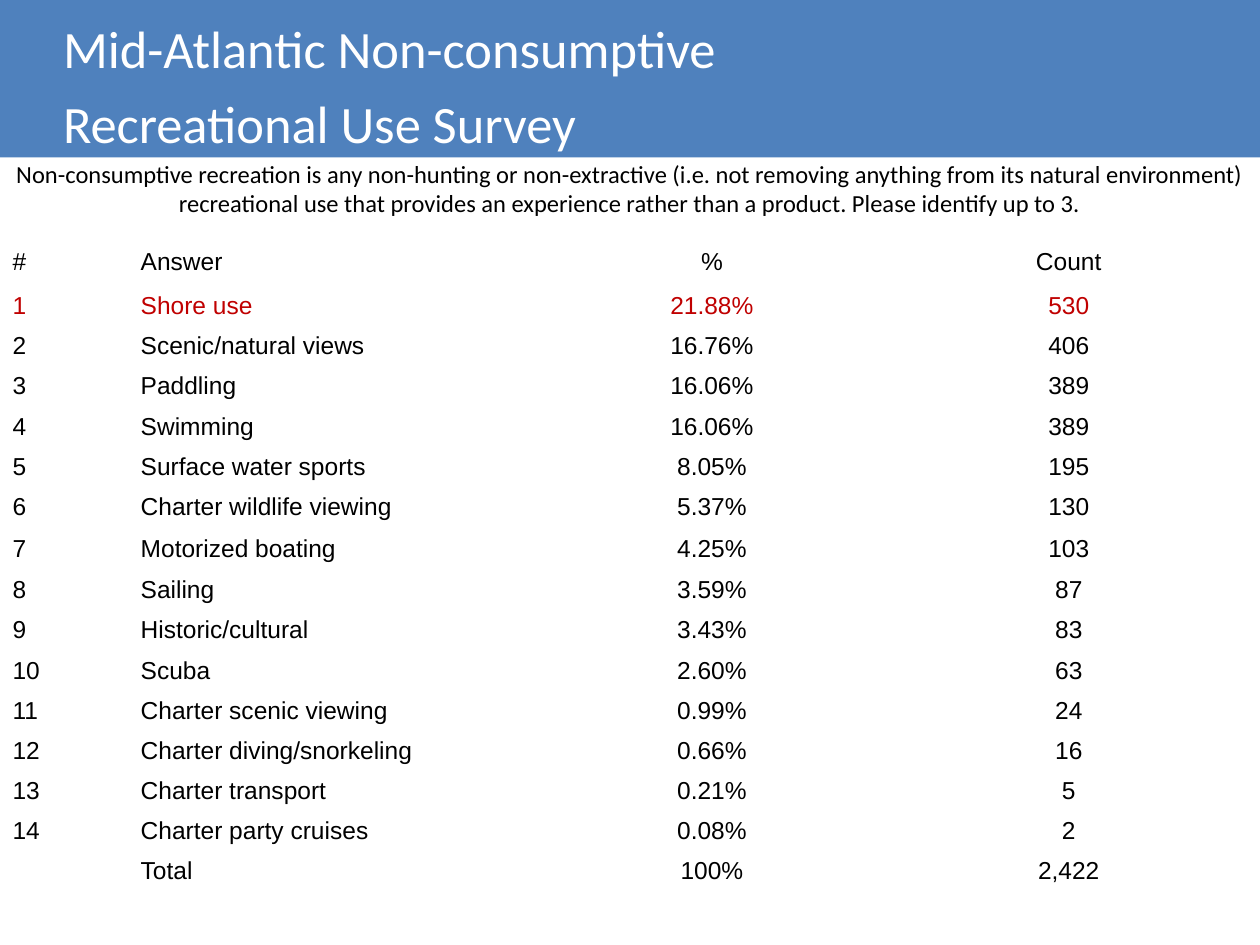
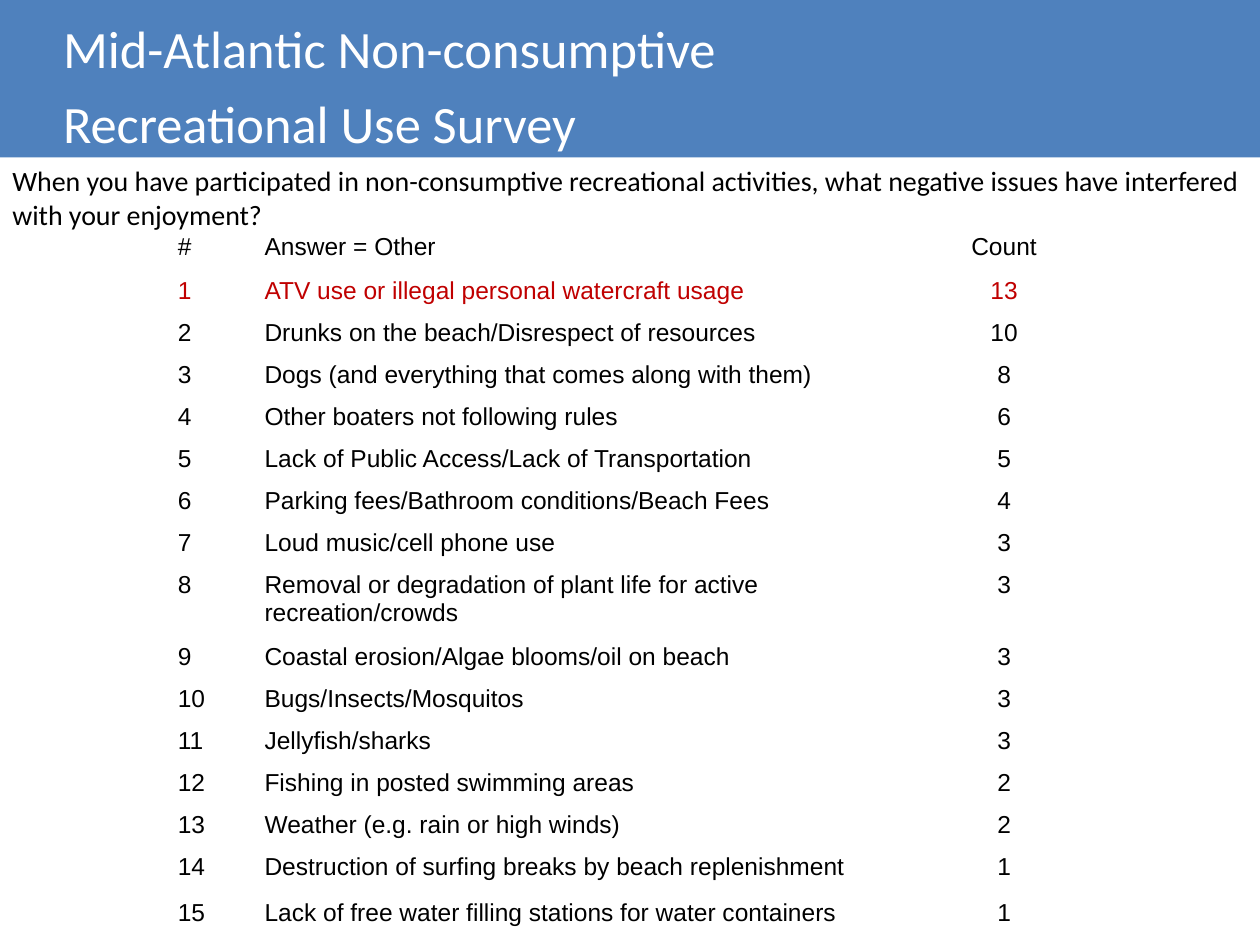
from pptx import Presentation
from pptx.dml.color import RGBColor
from pptx.enum import text as t
from pptx.oxml.ns import qn
from pptx.util import Pt

BLUE = RGBColor(0x4F, 0x81, 0xBD)
WHITE = RGBColor(0xFF, 0xFF, 0xFF)
BLACK = RGBColor(0x00, 0x00, 0x00)
RED = RGBColor(0xC0, 0x00, 0x00)

HEADING_FONT, TABLE_FONT = "Calibri", "Arial"
PLAIN_STYLE = "{2D5ABB26-0587-4C30-8999-92F81FD0307C}"  # no style, no grid
TITLE_ONLY = 5

BAND_BOX = (0, 0, 720, 90)
TITLE = "Mid-Atlantic Non-consumptive\nRecreational Use Survey"
ROW_HEIGHT = 22.9
ROW_HEIGHTS = {0: 25.2, 6: 23.8, 7: 23.8, 15: 33.8}

ACTIVITY_CAPTION = (
    "Non-consumptive recreation is any non-hunting or non-extractive "
    "(i.e. not removing anything from its natural environment) recreational use "
    "that provides an experience rather than a product. Please identify up to 3.")
ACTIVITIES = [
    ("#", "Answer", "%", "Count"),
    ("1", "Shore use", "21.88%", "530"),
    ("2", "Scenic/natural views", "16.76%", "406"),
    ("3", "Paddling", "16.06%", "389"),
    ("4", "Swimming", "16.06%", "389"),
    ("5", "Surface water sports", "8.05%", "195"),
    ("6", "Charter wildlife viewing", "5.37%", "130"),
    ("7", "Motorized boating", "4.25%", "103"),
    ("8", "Sailing", "3.59%", "87"),
    ("9", "Historic/cultural", "3.43%", "83"),
    ("10", "Scuba", "2.60%", "63"),
    ("11", "Charter scenic viewing", "0.99%", "24"),
    ("12", "Charter diving/snorkeling", "0.66%", "16"),
    ("13", "Charter transport", "0.21%", "5"),
    ("14", "Charter party cruises", "0.08%", "2"),
    ("", "Total", "100%", "2,422"),
]

ISSUE_CAPTION = (
    "When you have participated in non-consumptive recreational activities, "
    "what negative issues have interfered\nwith your enjoyment?")
ISSUES = [
    ("#", "Answer = Other", "Count"),
    ("1", "ATV use or illegal personal watercraft usage", "13"),
    ("2", "Drunks on the beach/Disrespect of resources", "10"),
    ("3", "Dogs (and everything that comes along with them)", "8"),
    ("4", "Other boaters not following rules", "6"),
    ("5", "Lack of Public Access/Lack of Transportation", "5"),
    ("6", "Parking fees/Bathroom conditions/Beach Fees", "4"),
    ("7", "Loud music/cell phone use", "3"),
    ("8", "Removal or degradation of plant life for active recreation/crowds", "3"),
    ("9", "Coastal erosion/Algae blooms/oil on beach", "3"),
    ("10", "Bugs/Insects/Mosquitos", "3"),
    ("11", "Jellyfish/sharks", "3"),
    ("12", "Fishing in posted swimming areas", "2"),
    ("13", "Weather (e.g. rain or high winds)", "2"),
    ("14", "Destruction of surfing breaks by beach replenishment", "1"),
    ("15", "Lack of free water filling stations for water containers", "1"),
]


def style_text(frame, font, size, color, align, line_spacing=None):
    for para in frame.paragraphs:
        para.alignment = align
        para.line_spacing = line_spacing
        for span in para.runs:
            span.font.name = font
            span.font.size = Pt(size)
            span.font.color.rgb = color


def fill_title_band(page, box):
    band = page.shapes.title
    band.left, band.top, band.width, band.height = map(Pt, box)
    band.fill.solid()
    band.fill.fore_color.rgb = BLUE
    frame = band.text_frame
    frame.text = TITLE
    frame.auto_size = t.MSO_AUTO_SIZE.NONE
    frame.vertical_anchor = t.MSO_ANCHOR.MIDDLE
    frame.margin_left = Pt(36)
    frame.margin_top = frame.margin_right = frame.margin_bottom = 0
    style_text(frame, HEADING_FONT, 30, WHITE, t.PP_ALIGN.LEFT, 1.2)


def add_caption(page, box, words, size, align):
    frame = page.shapes.add_textbox(*map(Pt, box)).text_frame
    frame.word_wrap = True
    frame.text = words
    style_text(frame, HEADING_FONT, size, BLACK, align)


def add_answer_table(page, corner, widths, answers, row_heights):
    """Number and answer columns read left; figures are centred; the top answer is red."""
    heights = [row_heights.get(i, ROW_HEIGHT) for i in range(len(answers))]
    box = (*corner, sum(widths), sum(heights))
    table = page.shapes.add_table(len(answers), len(widths), *map(Pt, box)).table
    table.first_row = table.horz_banding = False
    table._tbl.tblPr.find(qn("a:tableStyleId")).text = PLAIN_STYLE
    for column, width in zip(table.columns, widths):
        column.width = Pt(width)
    for i, (row, height, answer) in enumerate(zip(table.rows, heights, answers)):
        row.height = Pt(height)
        color = RED if i == 1 else BLACK
        for j, (cell, words) in enumerate(zip(row.cells, answer)):
            cell.fill.background()
            cell.text_frame.text = words
            align = t.PP_ALIGN.LEFT if j < 2 else t.PP_ALIGN.CENTER
            style_text(cell.text_frame, TABLE_FONT, 14, color, align)


def add_survey_page(deck):
    page = deck.slides.add_slide(deck.slide_layouts[TITLE_ONLY])
    fill_title_band(page, BAND_BOX)
    return page


def main():
    deck = Presentation()
    deck.slide_width, deck.slide_height = Pt(720), Pt(540)

    page = add_survey_page(deck)
    add_answer_table(page, (0, 138.2), (73.2, 239, 189.3, 218.5),
                     ACTIVITIES, ROW_HEIGHTS)
    add_caption(page, (0, 87.2, 720, 29), ACTIVITY_CAPTION, 14, t.PP_ALIGN.CENTER)

    page = add_survey_page(deck)
    add_caption(page, (0, 90, 728, 68), ISSUE_CAPTION, 16, t.PP_ALIGN.LEFT)
    add_answer_table(page, (94.4, 129.6), (49.6, 378, 103.6),
                     ISSUES, ROW_HEIGHTS | {14: 26})

    deck.save("out.pptx")


if __name__ == "__main__":
    main()
